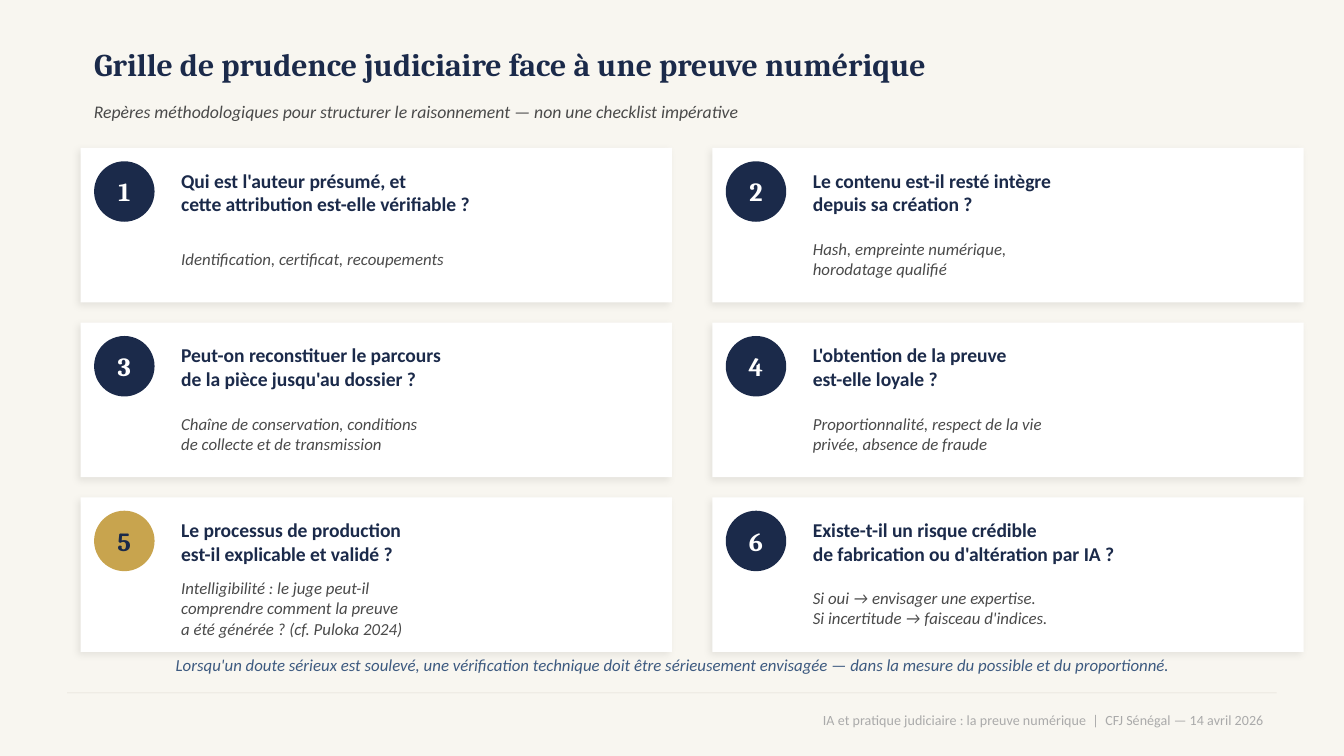
import lxml.etree
import pptx
import pptx.dml.color
import pptx.enum.shapes
import pptx.enum.text
import pptx.oxml.ns
import pptx.util

Inches = pptx.util.Inches
RGBColor = pptx.dml.color.RGBColor
SHAPE = pptx.enum.shapes.MSO_SHAPE
ALIGN = pptx.enum.text.PP_ALIGN

CREAM = RGBColor(0xF8, 0xF6, 0xF0)
RULE = RGBColor(0xEF, 0xEC, 0xE5)
NAVY = RGBColor(0x1B, 0x2A, 0x4A)
GOLD = RGBColor(0xC8, 0xA4, 0x4E)
BLUE = RGBColor(0x3D, 0x5A, 0x80)
DARK_GREY = RGBColor(0x4A, 0x4A, 0x4A)
LIGHT_GREY = RGBColor(0xAA, 0xAA, 0xAA)
WHITE = RGBColor(0xFF, 0xFF, 0xFF)

KEY_QUESTION = 5
QUESTIONS = [
    ("Qui est l'auteur présumé, et\ncette attribution est-elle vérifiable ?",
     "Identification, certificat, recoupements"),
    ("Le contenu est-il resté intègre\ndepuis sa création ?",
     "Hash, empreinte numérique,\nhorodatage qualifié"),
    ("Peut-on reconstituer le parcours\nde la pièce jusqu'au dossier ?",
     "Chaîne de conservation, conditions\nde collecte et de transmission"),
    ("L'obtention de la preuve\nest-elle loyale ?",
     "Proportionnalité, respect de la vie\nprivée, absence de fraude"),
    ("Le processus de production\nest-il explicable et validé ?",
     "Intelligibilité : le juge peut-il\ncomprendre comment la preuve\na été générée ? (cf. Puloka 2024)"),
    ("Existe-t-il un risque crédible\nde fabrication ou d'altération par IA ?",
     "Si oui → envisager une expertise.\nSi incertitude → faisceau d'indices."),
]


def write_text(sp, text, size, color, font="Calibri", bold=False, italic=False,
               align=ALIGN.LEFT):
    """Fill a shape with formatted text, one paragraph per line."""
    tf = sp.text_frame
    tf.word_wrap = True
    tf.auto_size = pptx.enum.text.MSO_AUTO_SIZE.NONE
    tf.vertical_anchor = pptx.enum.text.MSO_ANCHOR.MIDDLE
    tf.text = text
    for p in tf.paragraphs:
        p.alignment = align
        for r in p.runs:
            r.font.name = font
            r.font.size = pptx.util.Pt(size)
            r.font.bold = bold
            r.font.italic = italic
            r.font.color.rgb = color


def add_text(s, left, top, width, height, text, **style):
    """Add a formatted text box."""
    sp = s.shapes.add_textbox(Inches(left), Inches(top), Inches(width), Inches(height))
    write_text(sp, text, **style)


def add_filled(s, kind, left, top, width, height, color):
    """Add a plain filled shape without line or shadow."""
    sp = s.shapes.add_shape(kind, Inches(left), Inches(top), Inches(width), Inches(height))
    sp.shadow.inherit = False
    sp.fill.solid()
    sp.fill.fore_color.rgb = color
    sp.line.fill.background()
    return sp


def add_soft_shadow(sp):
    """Give a shape a faint outer shadow."""
    effects = sp._element.spPr.find(pptx.oxml.ns.qn("a:effectLst"))
    shadow = lxml.etree.SubElement(
        effects, pptx.oxml.ns.qn("a:outerShdw"), blurRad=str(pptx.util.Pt(4)),
        dist=str(pptx.util.Pt(2)), dir=str(135 * 60000), algn="bl", rotWithShape="0")
    color = lxml.etree.SubElement(shadow, pptx.oxml.ns.qn("a:srgbClr"), val="000000")
    lxml.etree.SubElement(color, pptx.oxml.ns.qn("a:alpha"), val="8000")


def add_header(s, left, top, width):
    """Place the title and its subtitle."""
    title = s.shapes.title
    title.left, title.top = Inches(left), Inches(top)
    title.width, title.height = Inches(width), Inches(0.45)
    write_text(title, "Grille de prudence judiciaire face à une preuve numérique",
               size=17, color=NAVY, font="Cambria", bold=True)
    add_text(s, left, top + 0.43, width, 0.3,
             "Repères méthodologiques pour structurer le raisonnement — "
             "non une checklist impérative",
             size=9.5, color=DARK_GREY, italic=True)


def add_card(s, left, top, width, height, number, question, hint):
    """Place one numbered question card."""
    card = add_filled(s, SHAPE.RECTANGLE, left, top, width, height, WHITE)
    add_soft_shadow(card)
    is_key = number == KEY_QUESTION
    badge = add_filled(s, SHAPE.OVAL, left + 0.1, top + 0.1, 0.45, 0.45,
                       GOLD if is_key else NAVY)
    tf = badge.text_frame
    tf.margin_left = tf.margin_right = tf.margin_top = tf.margin_bottom = 0
    write_text(badge, str(number), size=14, color=NAVY if is_key else WHITE,
               font="Cambria", bold=True, align=ALIGN.CENTER)
    add_text(s, left + 0.65, top + 0.08, width - 0.8, 0.5, question,
             size=10.5, color=NAVY, bold=True)
    add_text(s, left + 0.65, top + 0.6, width - 0.8, 0.45, hint,
             size=9, color=DARK_GREY, italic=True)


def add_grid(s, left, top, width, height, columns=2, gap_x=0.3, gap_y=0.15):
    """Lay the question cards out in equal rows and columns."""
    rows = len(QUESTIONS) // columns
    card_w = (width - gap_x * (columns - 1)) / columns
    card_h = (height - gap_y * (rows - 1)) / rows
    for i, (question, hint) in enumerate(QUESTIONS):
        row, column = divmod(i, columns)
        add_card(s, left + column * (card_w + gap_x), top + row * (card_h + gap_y),
                 card_w, card_h, i + 1, question, hint)


def add_footer(s, left, top, width):
    """Place the footer rule and its text."""
    add_filled(s, SHAPE.RECTANGLE, left, top, width, 0.01, RULE)
    add_text(s, left, top + 0.03, width, 0.35,
             "IA et pratique judiciaire : la preuve numérique  |  CFJ Sénégal — 14 avril 2026",
             size=7.5, color=LIGHT_GREY, align=ALIGN.RIGHT)


def main():
    """Build and save the slide."""
    prs = pptx.Presentation()
    prs.slide_width = Inches(10)
    prs.slide_height = prs.slide_width * 9 // 16
    s = prs.slides.add_slide(prs.slide_layouts[5])
    s.background.fill.solid()
    s.background.fill.fore_color.rgb = CREAM
    add_footer(s, 0.5, 5.15, 9)
    add_header(s, 0.6, 0.25, 9)
    add_grid(s, 0.6, 1.1, 9.1, 3.75)
    add_text(s, 0.6, 4.8, 8.8, 0.3,
             "Lorsqu'un doute sérieux est soulevé, une vérification technique doit être "
             "sérieusement envisagée — dans la mesure du possible et du proportionné.",
             size=9, color=BLUE, italic=True, align=ALIGN.CENTER)
    prs.save("out.pptx")


if __name__ == "__main__":
    main()
